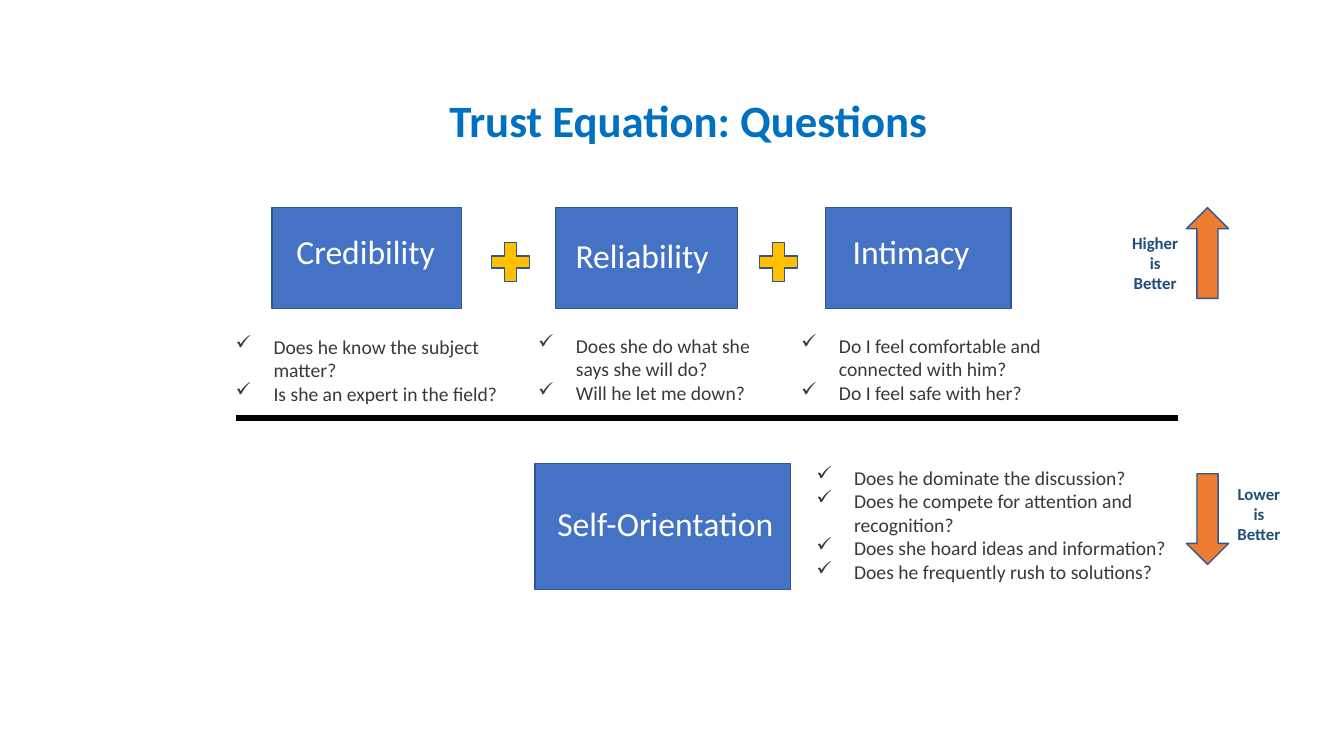
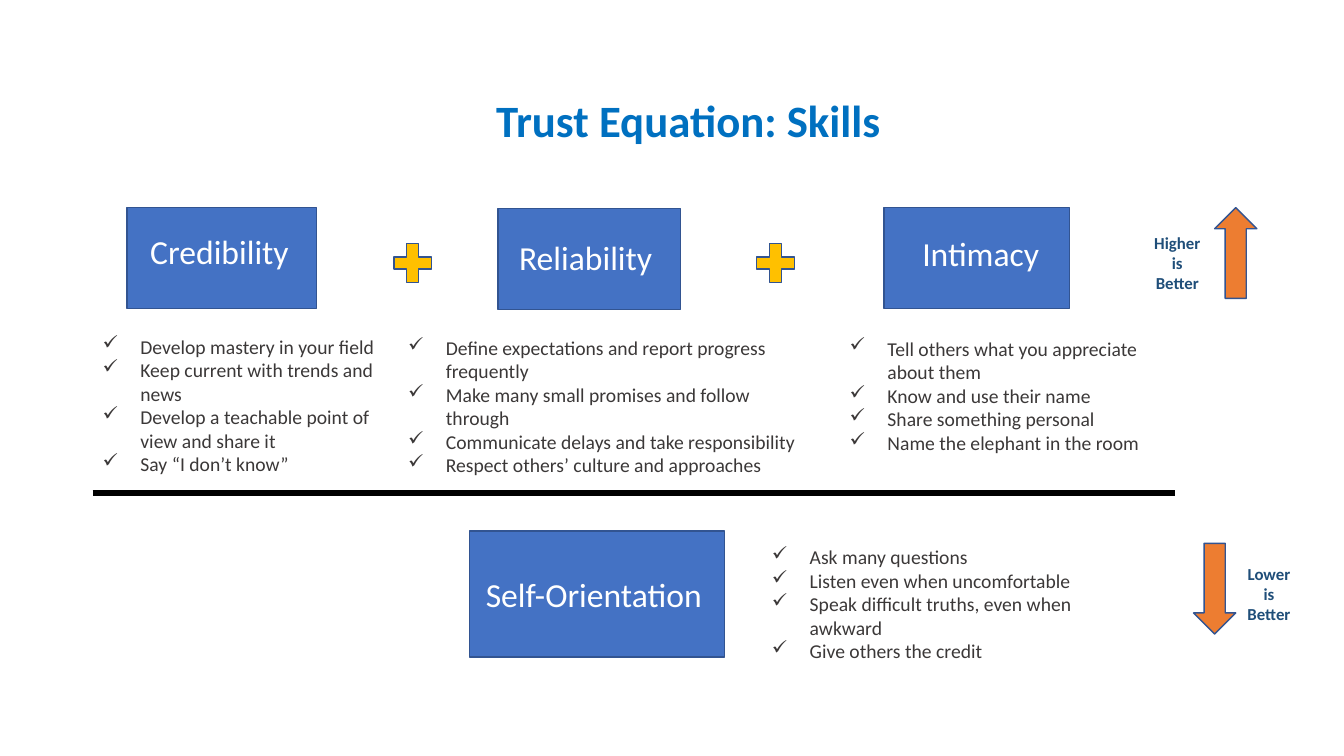
from dataclasses import dataclass

from lxml import etree
from pptx import Presentation
from pptx import slide as slides
from pptx import util as u
from pptx.dml import color, fill as fills
from pptx.enum import shapes, text
from pptx.oxml import ns
from pptx.shapes import autoshape
from pptx.text import text as texts

FONT = "Calibri"
TITLE_BLUE = "0070C0"
BOX_BLUE = "4472C4"
OUTLINE = "325491"
PLUS_YELLOW = "FFC000"
ARROW_ORANGE = "ED7D31"
CAPTION_BLUE = "1F4E79"
BODY_GREY = "3B3838"
WHITE = "FFFFFF"
BLACK = "000000"

ROW_TOP = 148.3
PLUS_SIZE = (36.7, 37.4)
ARROW_SIZE = (30.2, 64.8)
CAPTION_SIZE = (54.7, 51.1)
BULLET_INDENT = 27


@dataclass(frozen=True)
class Frame:
    left: float
    top: float
    width: float
    height: float

    def lengths(self) -> tuple[u.Pt, u.Pt, u.Pt, u.Pt]:
        return u.Pt(self.left), u.Pt(self.top), u.Pt(self.width), u.Pt(self.height)


@dataclass(frozen=True)
class Factor:
    name: str
    box: Frame
    label_inset: tuple[float, float]
    list_frame: Frame
    points: tuple[str, ...]


@dataclass(frozen=True)
class Direction:
    caption: str
    arrow_at: tuple[float, float]
    caption_at: tuple[float, float]
    rotation: int = 0


@dataclass(frozen=True)
class Equation:
    title: str
    factors: tuple[Factor, ...]
    pluses_left: tuple[float, ...]
    pluses_top: float
    divider_left: float
    divider_right: float
    divider_top: float
    directions: tuple[Direction, ...]


EQUATIONS = (
    Equation(
        "Trust Equation: Questions",
        (
            Factor("Credibility", Frame(194.4, ROW_TOP, 135.4, 72), (17.3, 16.6),
                   Frame(161.3, 235.4, 209.5, 58.3),
                   ("Does he know the subject matter?",
                    "Is she an expert in the field?")),
            Factor("Reliability", Frame(396.7, ROW_TOP, 130.3, 72), (14.4, 19.4),
                   Frame(377.3, 234.7, 188.6, 58.3),
                   ("Does she do what she says she will do?",
                    "Will he let me down?")),
            Factor("Intimacy", Frame(589.7, ROW_TOP, 132.5, 72), (19.4, 16.6),
                   Frame(565.2, 234.7, 216, 58.3),
                   ("Do I feel comfortable and connected with him?",
                    "Do I feel safe with her?")),
            Factor("Self-Orientation", Frame(382.3, 331.2, 182.2, 90), (15.8, 28.1),
                   Frame(576, 329, 270.7, 92.2),
                   ("Does he dominate the discussion?",
                    "Does he compete for attention and recognition?",
                    "Does she hoard ideas and information?",
                    "Does he frequently rush to solutions?")),
        ),
        (346.3, 537.8), 168.5,
        168.5, 841.7, 298.8,
        (
            Direction("Higher is Better", (847.4, ROW_TOP), (797.8, 162.7)),
            Direction("Lower is Better", (847.4, 338.4), (871.9, 342), 180),
        ),
    ),
    Equation(
        "Trust Equation: Skills",
        (
            Factor("Credibility", Frame(90.7, ROW_TOP, 135.4, 72), (16.6, 16.6),
                   Frame(66.2, 235.4, 209.5, 108.7),
                   ("Develop mastery in your field",
                    "Keep current with trends and news",
                    "Develop a teachable point of view and share it",
                    "Say “I don’t know”")),
            Factor("Reliability", Frame(355.7, 149, 130.3, 72), (15.1, 20.2),
                   Frame(284.4, 236.2, 303.1, 108.7),
                   ("Define expectations and report progress frequently",
                    "Make many small promises and follow through",
                    "Communicate delays and take responsibility",
                    "Respect others’ culture and approaches")),
            Factor("Intimacy", Frame(631.4, ROW_TOP, 132.5, 72), (27.4, 18),
                   Frame(599.8, 236.9, 241.2, 92.2),
                   ("Tell others what you appreciate about them",
                    "Know and use their name",
                    "Share something personal",
                    "Name the elephant in the room")),
            Factor("Self-Orientation", Frame(335.5, 379.4, 182.2, 90), (11.5, 30.2),
                   Frame(544.3, 385.9, 270.7, 92.2),
                   ("Ask many questions",
                    "Listen even when uncomfortable",
                    "Speak difficult truths, even when awkward",
                    "Give others the credit")),
        ),
        (276.5, 535.7), 169.2,
        66.2, 839.5, 352.1,
        (
            Direction("Higher is Better", (867.6, ROW_TOP), (813.6, 162.7)),
            Direction("Lower is Better", (852.5, 388.1), (879.1, 398.9), 180),
        ),
    ),
)


def paint(fill: fills.FillFormat, value: str) -> None:
    fill.solid()
    fill.fore_color.rgb = color.RGBColor.from_string(value)


def add_run(paragraph: texts._Paragraph, words: str, size: float, value: str,
            bold: bool = False) -> None:
    run = paragraph.add_run()
    run.text = words
    run.font.name = FONT
    run.font.size = u.Pt(size)
    run.font.bold = bold
    paint(run.font.fill, value)


def add_figure(slide: slides.Slide, kind: shapes.MSO_SHAPE, frame: Frame,
               value: str) -> autoshape.Shape:
    shape = slide.shapes.add_shape(kind, *frame.lengths())
    shape.shadow.inherit = False
    paint(shape.fill, value)
    paint(shape.line.fill, OUTLINE)
    shape.line.width = u.Pt(1)
    return shape


def add_text_frame(slide: slides.Slide, frame: Frame) -> texts.TextFrame:
    text_frame = slide.shapes.add_textbox(*frame.lengths()).text_frame
    text_frame.word_wrap = True
    text_frame.auto_size = text.MSO_AUTO_SIZE.SHAPE_TO_FIT_TEXT
    return text_frame


def add_title(slide: slides.Slide, words: str) -> None:
    title = slide.shapes.title
    title.left, title.top, title.width, title.height = Frame(77.8, 49.7, 828, 77).lengths()
    title.text_frame.auto_size = text.MSO_AUTO_SIZE.NONE
    title.text_frame.vertical_anchor = text.MSO_ANCHOR.MIDDLE
    paragraph = title.text_frame.paragraphs[0]
    paragraph.alignment = text.PP_ALIGN.CENTER
    paragraph.line_spacing = 0.9
    add_run(paragraph, words, 32, TITLE_BLUE, True)


def add_check_mark(paragraph: texts._Paragraph) -> None:
    properties = paragraph._p.get_or_add_pPr()
    properties.set("marL", str(u.Pt(BULLET_INDENT)))
    properties.set("indent", str(-u.Pt(BULLET_INDENT)))
    etree.SubElement(properties, ns.qn("a:buChar")).set("char", "✓")


def add_factor(slide: slides.Slide, factor: Factor) -> None:
    box = add_figure(slide, shapes.MSO_SHAPE.RECTANGLE, factor.box, BOX_BLUE)
    label = box.text_frame
    label.word_wrap = True
    label.vertical_anchor = text.MSO_ANCHOR.TOP
    label.margin_left, label.margin_top = map(u.Pt, factor.label_inset)
    label.margin_right = u.Pt(0)
    label.paragraphs[0].alignment = text.PP_ALIGN.LEFT
    add_run(label.paragraphs[0], factor.name, 24, WHITE)

    text_frame = add_text_frame(slide, factor.list_frame)
    for index, point in enumerate(factor.points):
        paragraph = text_frame.add_paragraph() if index else text_frame.paragraphs[0]
        add_check_mark(paragraph)
        add_run(paragraph, point, 14, BODY_GREY)


def add_divider(slide: slides.Slide, left: float, right: float, top: float) -> None:
    divider = slide.shapes.add_connector(
        shapes.MSO_CONNECTOR.STRAIGHT, u.Pt(left), u.Pt(top), u.Pt(right), u.Pt(top))
    paint(divider.line.fill, BLACK)
    divider.line.width = u.Pt(4.25)
    etree.SubElement(divider._element.spPr, ns.qn("a:effectLst"))


def add_direction(slide: slides.Slide, direction: Direction) -> None:
    arrow = add_figure(slide, shapes.MSO_SHAPE.UP_ARROW,
                       Frame(*direction.arrow_at, *ARROW_SIZE), ARROW_ORANGE)
    arrow.rotation = direction.rotation
    text_frame = add_text_frame(slide, Frame(*direction.caption_at, *CAPTION_SIZE))
    paragraph = text_frame.paragraphs[0]
    paragraph.alignment = text.PP_ALIGN.CENTER
    add_run(paragraph, direction.caption, 12, CAPTION_BLUE, True)


def add_equation(slide: slides.Slide, equation: Equation) -> None:
    add_title(slide, equation.title)
    for factor in equation.factors:
        add_factor(slide, factor)
    for left in equation.pluses_left:
        add_figure(slide, shapes.MSO_SHAPE.MATH_PLUS,
                   Frame(left, equation.pluses_top, *PLUS_SIZE), PLUS_YELLOW)
    add_divider(slide, equation.divider_left, equation.divider_right, equation.divider_top)
    for direction in equation.directions:
        add_direction(slide, direction)


def main() -> None:
    presentation = Presentation()
    presentation.slide_width = u.Pt(960)
    presentation.slide_height = u.Pt(540)
    title_only = presentation.slide_layouts.get_by_name("Title Only")
    for equation in EQUATIONS:
        add_equation(presentation.slides.add_slide(title_only), equation)
    presentation.save("out.pptx")


if __name__ == "__main__":
    main()
